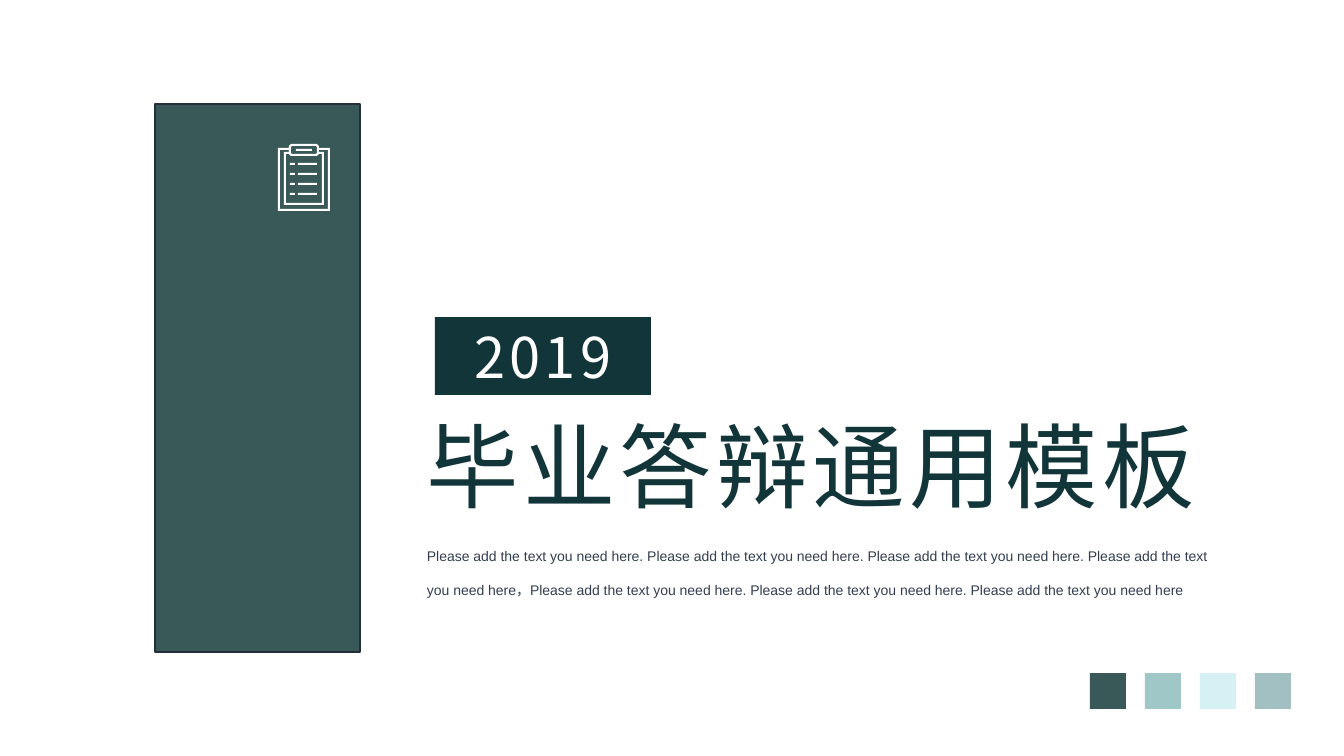
from pptx import Presentation
from pptx import util as u
from pptx.dml.color import RGBColor
from pptx.enum import shapes, text
from pptx.oxml.ns import qn

PX = u.Inches(1) / 100.8
COLORS = {
    "dark": "123539",
    "panel": "395959",
    "outline": "262E3B",
    "teal": "A0C7C8",
    "pale": "D6F1F3",
    "grey": "A2BFC1",
    "body": "333E50",
    "white": "FFFFFF",
}
CJK = "Noto Sans CJK SC"


def px(n):
    return u.Emu(round(n * PX))


def rgb(name):
    return RGBColor.from_string(COLORS[name])


def paint(sp, fill, line=None):
    sp.shadow.inherit = False
    sp.fill.solid()
    sp.fill.fore_color.rgb = rgb(fill)
    if line:
        sp.line.color.rgb = rgb(line)
        sp.line.width = u.Pt(1)
    else:
        sp.line.fill.background()


def add_rect(s, box, fill, line=None):
    sp = s.shapes.add_shape(shapes.MSO_SHAPE.RECTANGLE, *map(px, box))
    paint(sp, fill, line)
    return sp


def write(sp, words, font, size, color, spacing=0):
    """Fill a shape with one paragraph; spacing is in points between letters."""
    tf = sp.text_frame
    tf.word_wrap = True
    tf.text = words
    p = tf.paragraphs[0]
    r = p.runs[0]
    r.font.name = font
    r.font.size = u.Pt(size)
    r.font.color.rgb = rgb(color)
    rPr = r.font._element
    if spacing:
        rPr.set("spc", str(spacing * 100))
    ea = rPr.makeelement(qn("a:ea"), {"typeface": font})
    rPr.find(qn("a:latin")).addnext(ea)
    return p


def bar(x, y, w, h=2):
    return [(x, y), (x + w, y), (x + w, y + h), (x, y + h)]


def chamfered(x, y, w, h, cut):
    r, b = x + w, y + h
    return [(x + cut, y), (r - cut, y), (r, y + cut), (r, b - cut),
            (r - cut, b), (x + cut, b), (x, b - cut), (x, y + cut)]


def clipboard(s, x, y):
    """Draw a clipboard as nested contours, each one cutting the one around it."""
    silhouette = [(0, 4), (11, 4), (11, 2), (13, 0), (39, 0), (41, 2),
                  (41, 4), (52, 4), (52, 67), (0, 67)]
    border_gap = [(2, 6), (2, 65), (50, 65), (50, 6), (41, 6), (41, 8),
                  (46, 8), (46, 61), (6, 61), (6, 8), (11, 8), (11, 6)]
    page = [(8, 10), (8, 59), (44, 59), (44, 10), (41, 10), (39, 12),
            (13, 12), (11, 10)]
    contours = [silhouette, border_gap, page,
                chamfered(13, 2, 26, 8, 1), bar(18, 5, 16)]
    for row in range(4):
        top = 19 + row * 10
        contours += [bar(12, top, 5), bar(20, top, 19)]

    builder = s.shapes.build_freeform(*contours[0][0], scale=PX)
    builder.add_line_segments(contours[0][1:], close=True)
    for first, *rest in contours[1:]:
        builder.move_to(*first)
        builder.add_line_segments(rest, close=True)
    paint(builder.convert_to_shape(px(x), px(y)), "white")


def side_panel(s, x, y, w, h):
    add_rect(s, (x, y, w, h), "panel", "outline")
    clipboard(s, x + w - 82, y + 40)


def title_block(s, x, y, w):
    year = add_rect(s, (x + 18, y, 216, 78), "dark")
    year.text_frame.vertical_anchor = text.MSO_ANCHOR.MIDDLE
    p = write(year, "2019", CJK, 40, "white", 3)
    p.alignment = text.PP_ALIGN.CENTER

    title = s.shapes.add_textbox(px(x), px(y + 87), px(w), px(122))
    title.text_frame.vertical_anchor = text.MSO_ANCHOR.MIDDLE
    write(title, "毕业答辩通用模板", CJK, 66, "dark", 3)

    body = s.shapes.add_textbox(px(x), px(y + 209), px(w), px(73))
    sentence = "Please add the text you need here"
    words = ". ".join([sentence] * 4) + "，" + ". ".join([sentence] * 3)
    p = write(body, words, "Arial", 10, "body")
    p.line_spacing = 2.0


def swatches(s, x, y, size, pitch):
    for i, color in enumerate(["panel", "teal", "pale", "grey"]):
        add_rect(s, (x + i * pitch, y, size, size), color)


def main():
    prs = Presentation()
    prs.slide_width, prs.slide_height = px(1344), px(756)
    s = prs.slides.add_slide(prs.slide_layouts[6])
    title_block(s, 417, 317, 820)
    side_panel(s, 155, 104, 205, 548)
    swatches(s, 1090, 673, 36, 55)
    prs.save("out.pptx")


if __name__ == "__main__":
    main()
